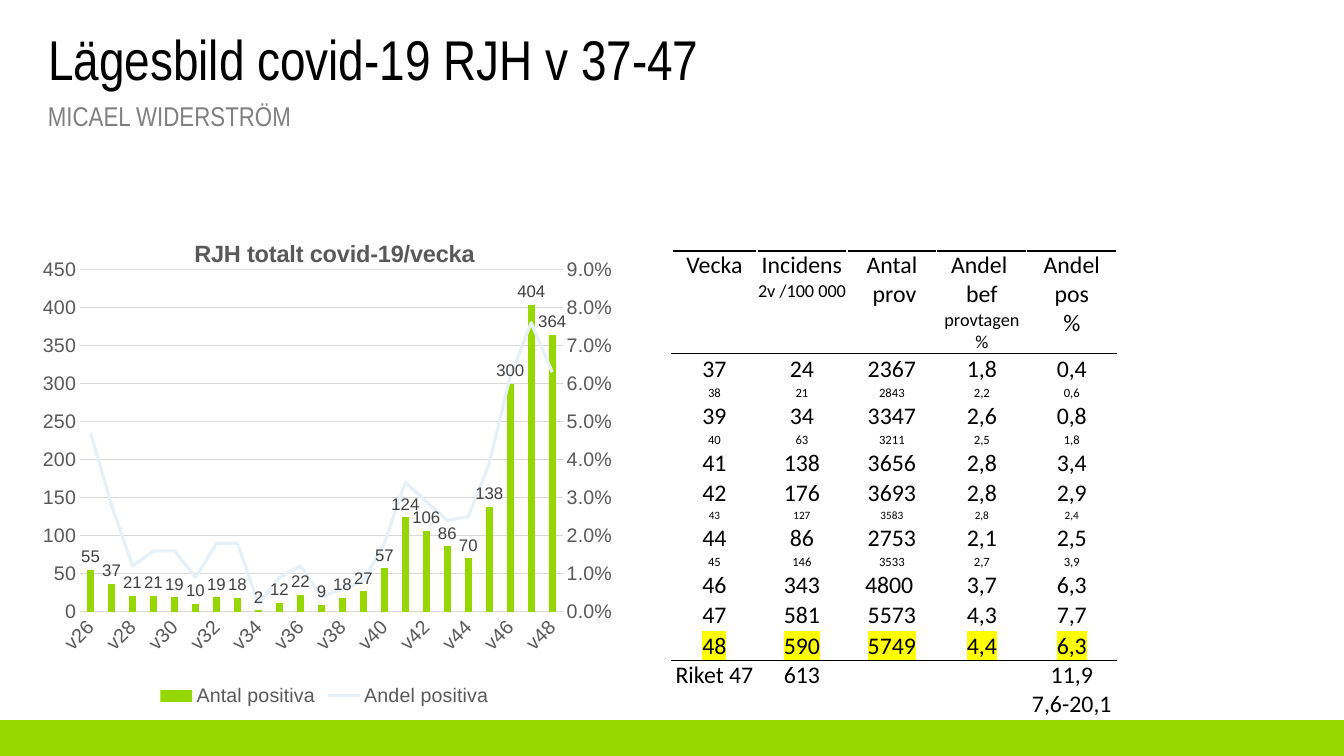
from pptx import Presentation
from pptx.chart.data import CategoryChartData
from pptx.dml.color import RGBColor
from pptx.enum.chart import XL_CHART_TYPE, XL_LABEL_POSITION, XL_LEGEND_POSITION, XL_TICK_MARK
from pptx.enum.shapes import MSO_SHAPE
from pptx.enum.text import MSO_ANCHOR, MSO_AUTO_SIZE, PP_ALIGN
from pptx.oxml import parse_xml
from pptx.oxml.ns import nsdecls, qn
from pptx.util import Emu, Pt

TITLE = "Lägesbild covid-19 RJH v 37-47"
AUTHOR = "MICAEL WIDERSTRÖM"
CHART_TITLE = "RJH totalt covid-19/vecka"
WEEKS = [f"v{week}" for week in range(26, 49)]
POSITIVE_COUNT = [55, 37, 21, 21, 19, 10, 19, 18, 2, 12, 22, 9, 18, 27, 57,
                  124, 106, 86, 70, 138, 300, 404, 364]
POSITIVE_SHARE = [0.047, 0.028, 0.012, 0.016, 0.016, 0.009, 0.018, 0.018, 0.002, 0.009, 0.012, 0.004,
                  0.006, 0.008, 0.018, 0.034, 0.029, 0.024, 0.025, 0.039, 0.062, 0.076, 0.063]
HEADINGS = [
    [("Vecka", 17)],
    [("Incidens ", 17), ("2v /100 000", 13)],
    [("Antal\n prov", 17)],
    [("Andel \nbef ", 17), ("provtagen %", 13)],
    [("Andel\n pos \n%", 17)],
]
WEEK_ROWS = [
    (17, ["37", "24", "2367", "1,8", "0,4"]),
    (9, ["38", "21", "2843", "2,2", "0,6"]),
    (17, ["39", "34", "3347", "2,6", "0,8"]),
    (9, ["40", "63", "3211", "2,5", "1,8"]),
    (17, ["41", "138", "3656", "2,8", "3,4"]),
    (17, ["42", "176", "3693", "2,8", "2,9"]),
    (8, ["43", "127", "3583", "2,8", "2,4"]),
    (17, ["44", "86", "2753", "2,1", "2,5"]),
    (9, ["45", "146", "3533", "2,7", "3,9"]),
    (17, ["46", "343", "4800 ", "3,7", "6,3"]),
    (17, ["47", "581", "5573", "4,3", "7,7"]),
    (17, ["48", "590", "5749", "4,4", "6,3"]),
]
COUNTRY = [["Riket 47"], ["613"], [], [], ["11,9", "7,6-20,1"]]
COLUMN_WIDTHS = [85, 90, 90, 90, 90]
ROW_HEIGHT = {17: 29, 9: 17, 8: 15}
GREEN, PALE, GREY, RULE = "97D700", "E6F0F9", "595959", "D9D9D9"
BLACK, WHITE, YELLOW = "000000", "FFFFFF", "FFFF00"
SCALE = 914400 / 100.8


def px(length):
    return Emu(round(length * SCALE))


def rgb(value):
    return RGBColor.from_string(value)


def set_font(font, size, color, face):
    font.size, font.name = Pt(size), face
    font.color.rgb = rgb(color)


def add_text(paragraph, text, size, color, face, highlight=None):
    for number, line in enumerate(text.split("\n")):
        if number:
            paragraph.add_line_break()
        run = paragraph.add_run()
        run.text = line
        set_font(run.font, size, color, face)
        if highlight:
            mark = parse_xml(f'<a:highlight {nsdecls("a")}><a:srgbClr val="{highlight}"/></a:highlight>')
            run.font._element.find(qn("a:latin")).addprevious(mark)


def set_borders(cell, top, bottom):
    properties = cell._tc.get_or_add_tcPr()
    for side, color in zip("LRTB", (WHITE, WHITE, top, bottom)):
        properties.append(parse_xml(
            f'<a:ln{side} {nsdecls("a")} w="12700"><a:solidFill><a:srgbClr val="{color}"/>'
            f'</a:solidFill></a:ln{side}>'))


def layout_xml(x, y, size=""):
    return parse_xml(
        f'<c:layout {nsdecls("c")}><c:manualLayout>{"<c:layoutTarget val=" + chr(34) + "inner" + chr(34) + "/>" if size else ""}'
        f'<c:xMode val="edge"/><c:yMode val="edge"/><c:x val="{x}"/><c:y val="{y}"/>{size}'
        '</c:manualLayout></c:layout>')


def add_share_line(chart):
    bars = chart.element.xpath(".//c:barChart")[0]
    share = bars.findall(qn("c:ser"))[1]
    for flag in share.findall(qn("c:invertIfNegative")):
        share.remove(flag)
    bars.remove(share)
    share.find(qn("c:spPr")).addnext(parse_xml(
        f'<c:marker {nsdecls("c")}><c:symbol val="none"/></c:marker>'))
    share.append(parse_xml(f'<c:smooth {nsdecls("c")} val="0"/>'))
    lines = parse_xml(
        f'<c:lineChart {nsdecls("c")}><c:grouping val="standard"/><c:varyColors val="0"/>'
        '<c:marker val="1"/><c:axId val="5001"/><c:axId val="5002"/></c:lineChart>')
    lines.insert(2, share)
    bars.addnext(lines)
    axes = (("catAx", 5001, 5002, 1, "b", "General", "autoZero", "", ""),
            ("valAx", 5002, 5001, 0, "r", "0.0%", "max",
             '<c:max val="0.09"/><c:min val="0"/>', '<c:majorUnit val="0.01"/>'))
    last = chart.element.xpath(".//c:valAx")[0]
    for kind, own, other, hidden, side, number_format, crossing, limits, unit in axes:
        axis = parse_xml(
            f'<c:{kind} {nsdecls("c", "a")}><c:axId val="{own}"/>'
            f'<c:scaling><c:orientation val="minMax"/>{limits}</c:scaling>'
            f'<c:delete val="{hidden}"/><c:axPos val="{side}"/>'
            f'<c:numFmt formatCode="{number_format}" sourceLinked="0"/>'
            '<c:majorTickMark val="none"/><c:minorTickMark val="none"/><c:tickLblPos val="nextTo"/>'
            '<c:spPr><a:ln><a:noFill/></a:ln></c:spPr>'
            f'<c:crossAx val="{other}"/><c:crosses val="{crossing}"/>{unit}</c:{kind}>')
        last.addnext(axis)
        last = axis


def add_chart(slide):
    data = CategoryChartData()
    data.categories = WEEKS
    data.add_series("Antal positiva", POSITIVE_COUNT, "General")
    data.add_series("Andel positiva", POSITIVE_SHARE, "0.0%")
    chart = slide.shapes.add_chart(
        XL_CHART_TYPE.COLUMN_CLUSTERED, px(19), px(215), px(611), px(496), data).chart
    set_font(chart.font, 14, GREY, "Arial")
    add_text(chart.chart_title.text_frame.paragraphs[0], CHART_TITLE, 16.8, GREY, "Arial")
    heading = chart.element.xpath("./c:chart/c:title")[0]
    for old in heading.findall(qn("c:layout")):
        heading.remove(old)
    heading.find(qn("c:tx")).addnext(layout_xml(0.28, 0.04))
    chart.has_legend = True
    chart.legend.position = XL_LEGEND_POSITION.BOTTOM
    chart.legend.include_in_layout = False
    set_font(chart.legend.font, 14, GREY, "Arial")
    weeks, counts = chart.category_axis, chart.value_axis
    for axis in (weeks, counts):
        axis.major_tick_mark = axis.minor_tick_mark = XL_TICK_MARK.NONE
        set_font(axis.tick_labels.font, 14, GREY, "Arial")
    weeks.format.line.color.rgb = rgb(RULE)
    weeks.format.line.width = Pt(0.75)
    weeks._element.find(qn("c:txPr")).find(qn("a:bodyPr")).set("rot", "-2700000")
    counts.minimum_scale, counts.maximum_scale, counts.major_unit = 0, 450, 50
    counts.format.line.fill.background()
    counts.major_gridlines.format.line.color.rgb = rgb(RULE)
    counts.major_gridlines.format.line.width = Pt(0.75)
    plot = chart.plots[0]
    plot.gap_width, plot.overlap, plot.vary_by_categories = 219, -27, False
    count, share = plot.series
    count.format.fill.solid()
    count.format.fill.fore_color.rgb = rgb(GREEN)
    labels = count.data_labels
    labels.show_value, labels.position = True, XL_LABEL_POSITION.OUTSIDE_END
    set_font(labels.font, 12, "404040", "Arial")
    share.format.line.color.rgb = rgb(PALE)
    share.format.line.width = Pt(2.25)
    add_share_line(chart)
    area = chart.element.xpath(".//c:plotArea")[0]
    for old in area.findall(qn("c:layout")):
        area.remove(old)
    area.insert(0, layout_xml(0.1, 0.11, '<c:w val="0.79"/><c:h val="0.69"/>'))


def add_table(slide):
    heights = [101] + [ROW_HEIGHT[size] for size, _ in WEEK_ROWS] + [56]
    rows = [[[runs] for runs in HEADINGS]]
    rows += [[[[(value, size)]] for value in values] for size, values in WEEK_ROWS]
    rows.append([[[(line, 17)] for line in lines] for lines in COUNTRY])
    table = slide.shapes.add_table(len(rows), len(COLUMN_WIDTHS), px(672), px(251),
                                   px(sum(COLUMN_WIDTHS)), px(sum(heights))).table
    table.first_row = table.horz_banding = False
    for column, width in zip(table.columns, COLUMN_WIDTHS):
        column.width = px(width)
    last = len(rows) - 1
    for r, (row, height) in enumerate(zip(rows, heights)):
        table.rows[r].height = px(height)
        for c, paragraphs in enumerate(row):
            cell = table.cell(r, c)
            inset = px(1) if c == 3 and 0 < r < last else 0
            cell.margin_left = cell.margin_right = cell.margin_top = inset
            cell.margin_bottom = 0
            at_bottom = 0 < r < last or (r == last and c == 4)
            cell.vertical_anchor = MSO_ANCHOR.BOTTOM if at_bottom else MSO_ANCHOR.TOP
            set_borders(cell, BLACK if r in (0, 1, last) else WHITE,
                        BLACK if r in (0, last - 1) else WHITE)
            cell.fill.background()
            for number, runs in enumerate(paragraphs):
                frame = cell.text_frame
                paragraph = frame.add_paragraph() if number else frame.paragraphs[0]
                paragraph.alignment = PP_ALIGN.CENTER
                for text, size in runs:
                    add_text(paragraph, text, size, BLACK, "Calibri", YELLOW if r == last - 1 else None)


def place_line(box, bounds, text, size, color, anchor):
    box.left, box.top, box.width, box.height = map(px, bounds)
    frame = box.text_frame
    frame.word_wrap, frame.auto_size, frame.vertical_anchor = True, MSO_AUTO_SIZE.NONE, anchor
    paragraph = frame.paragraphs[0]
    paragraph.alignment, paragraph.line_spacing = PP_ALIGN.LEFT, 0.9
    add_text(paragraph, text, size, color, "Arial Narrow")


def main():
    deck = Presentation()
    deck.slide_width, deck.slide_height = px(1344), px(756)
    slide = deck.slides.add_slide(deck.slide_layouts[5])
    footer = slide.shapes.add_shape(MSO_SHAPE.RECTANGLE, 0, px(720), px(1344), px(36))
    footer.shadow.inherit = False
    footer.fill.solid()
    footer.fill.fore_color.rgb = rgb(GREEN)
    footer.line.fill.background()
    place_line(slide.shapes.title, (38, 26, 687, 72), TITLE, 40, BLACK, MSO_ANCHOR.MIDDLE)
    add_table(slide)
    add_chart(slide)
    place_line(slide.shapes.add_textbox(0, 0, 0, 0), (38, 98, 322, 40), AUTHOR, 19.4, "808080", MSO_ANCHOR.TOP)
    deck.save("out.pptx")


if __name__ == "__main__":
    main()
